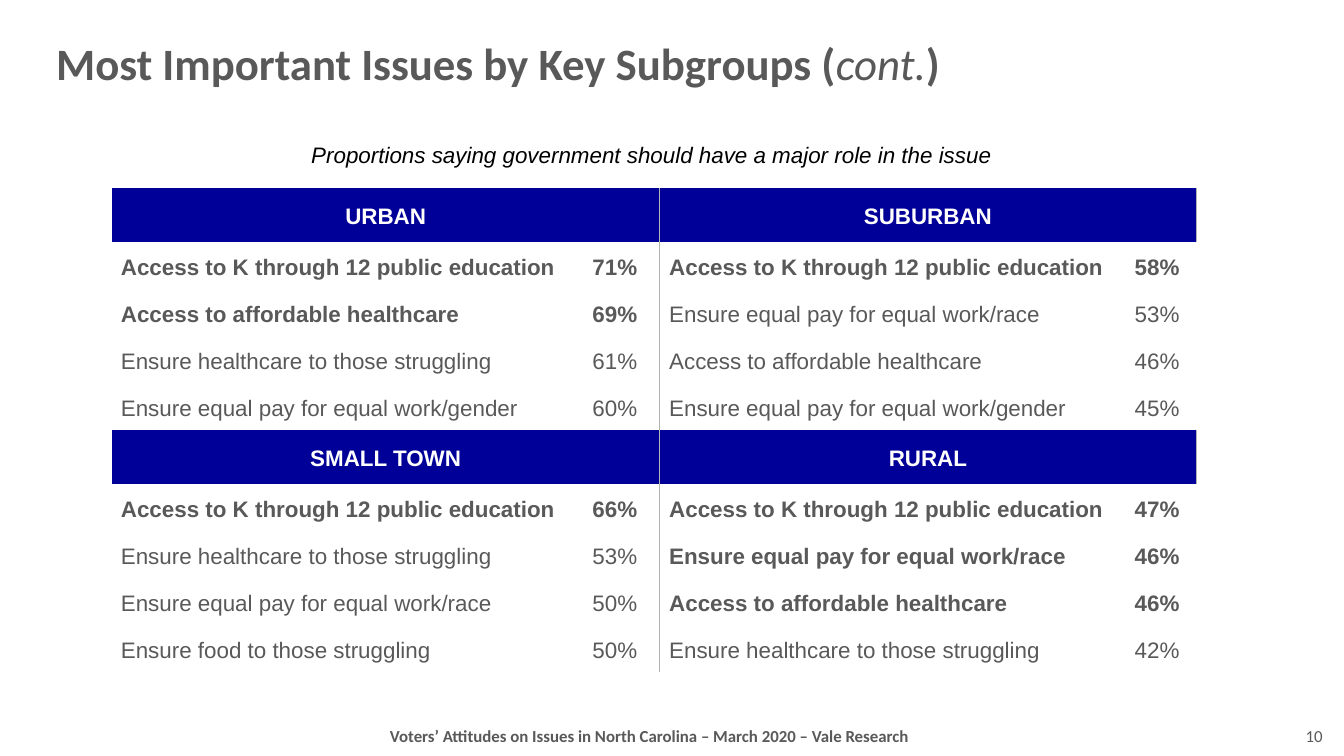
from dataclasses import dataclass

from lxml.etree import SubElement
from pptx import Presentation
from pptx.dml.color import RGBColor
from pptx.enum.text import MSO_ANCHOR, MSO_AUTO_SIZE, PP_ALIGN
from pptx.oxml.ns import qn
from pptx.util import Inches, Pt


@dataclass(frozen=True)
class Theme:
    heading_font: str = "Calibri"
    body_font: str = "Arial"
    gray: str = "595959"
    white: str = "FFFFFF"
    black: str = "000000"
    navy: str = "000099"
    rule: str = "B2B2B2"
    rule_width: float = 0.5
    title_size: int = 24
    body_size: int = 12
    footer_size: int = 9


THEME = Theme()
PLAIN_TABLE_STYLE = "{2D5ABB26-0587-4C30-8999-92F81FD0307C}"
BORDER_TAGS = ("a:lnL", "a:lnR", "a:lnT", "a:lnB")
COLUMN_WIDTHS = (3.41, 0.67, 3.41, 0.58)
HEADER_HEIGHT = 0.4
ISSUE_HEIGHT = 0.35

EDUCATION = "Access to K through 12 public education"
AFFORDABLE = "Access to affordable healthcare"
STRUGGLING = "Ensure healthcare to those struggling"
PAY_GENDER = "Ensure equal pay for equal work/gender"
PAY_RACE = "Ensure equal pay for equal work/race"
FOOD = "Ensure food to those struggling"

GROUP_ROWS = (
    (
        ("URBAN", 2, ((EDUCATION, 71), (AFFORDABLE, 69), (STRUGGLING, 61), (PAY_GENDER, 60))),
        ("SUBURBAN", 1, ((EDUCATION, 58), (PAY_RACE, 53), (AFFORDABLE, 46), (PAY_GENDER, 45))),
    ),
    (
        ("SMALL TOWN", 1, ((EDUCATION, 66), (STRUGGLING, 53), (PAY_RACE, 50), (FOOD, 50))),
        ("RURAL", 3, ((EDUCATION, 47), (PAY_RACE, 46), (AFFORDABLE, 46), (STRUGGLING, 42))),
    ),
)


def format_run(run, font, size, color, bold=False, italic=False):
    run.font.name = font
    run.font.size = Pt(size)
    run.font.color.rgb = RGBColor.from_string(color)
    run.font.bold = bold
    run.font.italic = italic


def add_text(slide, box, text, alignment, font, size, color, bold=False, italic=False, wrap=True):
    shape = slide.shapes.add_textbox(*(Inches(length) for length in box))
    text_frame = shape.text_frame
    text_frame.word_wrap = wrap
    text_frame.auto_size = MSO_AUTO_SIZE.NONE
    text_frame.text = text
    paragraph = text_frame.paragraphs[0]
    paragraph.alignment = alignment
    format_run(paragraph.runs[0], font, size, color, bold, italic)


def add_title(slide):
    shape = slide.shapes.add_textbox(Inches(0.32), Inches(0.03), Inches(8.42), Inches(0.94))
    text_frame = shape.text_frame
    text_frame.word_wrap = True
    text_frame.vertical_anchor = MSO_ANCHOR.MIDDLE
    paragraph = text_frame.paragraphs[0]
    paragraph.line_spacing = 0.8
    parts = (("Most Important Issues by Key Subgroups (", False), ("cont.", True), (")", False))
    for text, italic in parts:
        run = paragraph.add_run()
        run.text = text
        format_run(run, THEME.heading_font, THEME.title_size, THEME.gray, not italic, italic)


def set_borders(cell, visible_tags):
    properties = cell._tc.get_or_add_tcPr()
    for tag in BORDER_TAGS:
        line = SubElement(properties, qn(tag), w=str(Pt(THEME.rule_width)))
        if tag in visible_tags:
            fill = SubElement(line, qn("a:solidFill"))
            SubElement(fill, qn("a:srgbClr"), val=THEME.rule)
        else:
            SubElement(line, qn("a:noFill"))


def fill_cell(cell, text, alignment, color, bold, borders=(), background=None):
    cell.margin_left = cell.margin_right = Inches(0.07)
    cell.margin_top = cell.margin_bottom = 0
    cell.vertical_anchor = MSO_ANCHOR.MIDDLE
    set_borders(cell, borders)
    if background:
        cell.fill.solid()
        cell.fill.fore_color.rgb = RGBColor.from_string(background)
    else:
        cell.fill.background()
    cell.text_frame.text = text
    paragraph = cell.text_frame.paragraphs[0]
    paragraph.alignment = alignment
    paragraph.line_spacing = 1.15
    format_run(paragraph.runs[0], THEME.body_font, THEME.body_size, color, bold)


def fill_group(table, top, left, group):
    name, bold_count, issues = group
    is_left = left == 0
    header = table.cell(top, left)
    header.merge(table.cell(top, left + 1))
    header_borders = ("a:lnR",) if is_left else ("a:lnL", "a:lnR")
    fill_cell(header, name, PP_ALIGN.CENTER, THEME.white, True, header_borders, THEME.navy)
    issue_borders, share_borders = ((), ("a:lnR",)) if is_left else (("a:lnL",), ())
    for rank, (issue, share) in enumerate(issues):
        row = top + 1 + rank
        bold = rank < bold_count
        fill_cell(table.cell(row, left), issue, PP_ALIGN.JUSTIFY, THEME.gray, bold, issue_borders)
        fill_cell(table.cell(row, left + 1), f"{share}%", PP_ALIGN.CENTER, THEME.gray, bold, share_borders)


def add_issue_table(slide):
    heights = (HEADER_HEIGHT, *[ISSUE_HEIGHT] * 4) * len(GROUP_ROWS)
    frame = slide.shapes.add_table(
        len(heights), len(COLUMN_WIDTHS), Inches(0.83), Inches(1.4),
        Inches(sum(COLUMN_WIDTHS)), Inches(sum(heights)),
    )
    table = frame.table
    table.first_row = False
    table.horz_banding = False
    table._tbl.tblPr.find(qn("a:tableStyleId")).text = PLAIN_TABLE_STYLE
    for column, width in zip(table.columns, COLUMN_WIDTHS):
        column.width = Inches(width)
    for row, height in zip(table.rows, heights):
        row.height = Inches(height)
    for row_index, groups in enumerate(GROUP_ROWS):
        for column_index, group in enumerate(groups):
            fill_group(table, row_index * 5, column_index * 2, group)


def main():
    presentation = Presentation()
    presentation.slide_width = Inches(10)
    presentation.slide_height = Inches(10) * 9 // 16
    slide = presentation.slides.add_slide(presentation.slide_layouts[6])
    add_text(
        slide, (1.84, 5.35, 5.98, 0.25),
        "Voters’ Attitudes on Issues in North Carolina – March 2020 – Vale Research",
        PP_ALIGN.CENTER, THEME.heading_font, THEME.footer_size, THEME.gray, bold=True,
    )
    add_title(slide)
    add_issue_table(slide)
    add_text(
        slide, (9.3, 5.35, 0.64, 0.25), "10",
        PP_ALIGN.RIGHT, THEME.heading_font, THEME.footer_size, THEME.gray,
    )
    add_text(
        slide, (2.2, 1, 5.3, 0.3),
        "Proportions saying government should have a major role in the issue",
        PP_ALIGN.CENTER, THEME.body_font, THEME.body_size, THEME.black, italic=True, wrap=False,
    )
    presentation.save("out.pptx")


if __name__ == "__main__":
    main()
